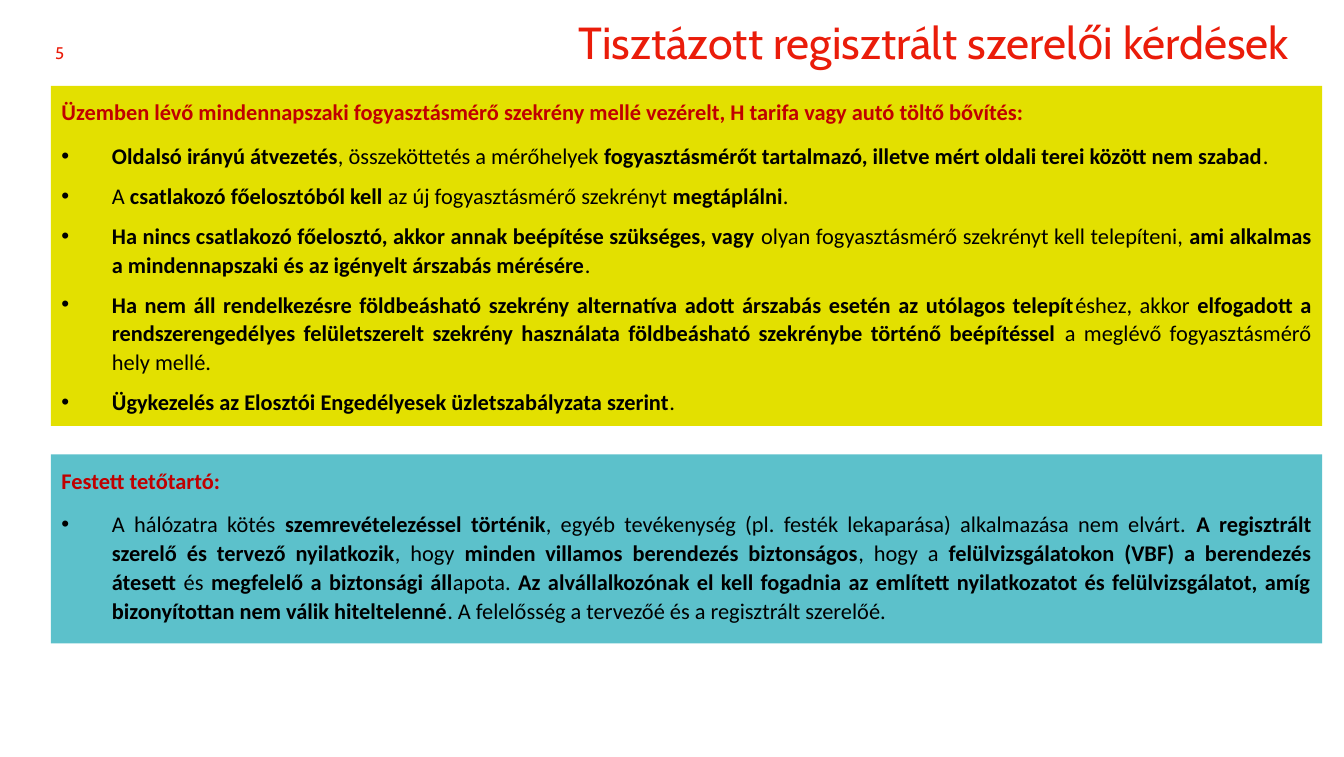
from lxml.etree import SubElement
from pptx import Presentation
from pptx.dml.color import RGBColor
from pptx.enum.shapes import MSO_SHAPE as Shape
from pptx.enum.text import MSO_ANCHOR as Anchor, PP_ALIGN as Align
from pptx.oxml.ns import qn
from pptx.util import Pt

RED = RGBColor(0xEA, 0x1C, 0x0A)
DARK_RED = RGBColor(0xC0, 0x00, 0x00)
BLACK = RGBColor(0x00, 0x00, 0x00)
YELLOW = RGBColor(0xE3, 0xE0, 0x00)
TEAL = RGBColor(0x5C, 0xC1, 0xCB)

PANEL_LEFT, PANEL_WIDTH = 27.3, 681
INSET = 5.67
INDENT = 27

METER_HEADING = (
    "Üzemben lévő mindennapszaki fogyasztásmérő szekrény mellé vezérelt, "
    "H tarifa vagy autó töltő bővítés:"
)
METER_RULES = [
    "**Oldalsó irányú átvezetés**, összeköttetés a mérőhelyek "
    "**fogyasztásmérőt tartalmazó, illetve mért oldali terei között nem szabad**.",
    "A **csatlakozó főelosztóból kell** az új fogyasztásmérő szekrényt **megtáplálni**.",
    "**Ha nincs csatlakozó főelosztó, akkor annak beépítése szükséges, vagy **"
    "olyan fogyasztásmérő szekrényt kell telepíteni, "
    "**ami alkalmas a mindennapszaki és az igényelt árszabás mérésére**.",
    "**Ha nem áll rendelkezésre földbeásható szekrény alternatíva adott árszabás "
    "esetén az utólagos telepít**éshez, akkor **elfogadott a rendszerengedélyes "
    "felületszerelt szekrény használata földbeásható szekrénybe történő beépítéssel **"
    "a meglévő fogyasztásmérő hely mellé.",
    "**Ügykezelés az Elosztói Engedélyesek üzletszabályzata szerint**.",
]
ROOF_HEADING = "Festett tetőtartó:"
ROOF_RULES = [
    "A hálózatra kötés **szemrevételezéssel történik**, egyéb tevékenység "
    "(pl. festék lekaparása) alkalmazása nem elvárt. **A regisztrált szerelő és "
    "tervező nyilatkozik**, hogy **minden villamos berendezés biztonságos**, hogy a "
    "**felülvizsgálatokon (VBF) a berendezés átesett** és **megfelelő a biztonsági "
    "áll**apota. **Az alvállalkozónak el kell fogadnia az említett nyilatkozatot és "
    "felülvizsgálatot, amíg bizonyítottan nem válik hiteltelenné**. "
    "A felelősség a tervezőé és a regisztrált szerelőé.",
]


def set_frame(frame, inset):
    frame.word_wrap = True
    frame.vertical_anchor = Anchor.TOP
    frame.margin_left = frame.margin_right = Pt(inset)
    frame.margin_top = frame.margin_bottom = Pt(inset)


def set_font(paragraph, name, size, color):
    paragraph.font.name = name
    paragraph.font.size = Pt(size)
    paragraph.font.color.rgb = color


def add_label(slide, left, top, width, height, text, size, leading, align):
    label = slide.shapes.add_textbox(Pt(left), Pt(top), Pt(width), Pt(height))
    set_frame(label.text_frame, 0)
    line = label.text_frame.paragraphs[0]
    line.text = text
    line.alignment = align
    line.line_spacing = Pt(leading)
    set_font(line, "Cabin", size, RED)


def format_body(paragraph, color, space_after):
    paragraph.alignment = Align.JUSTIFY
    paragraph.line_spacing = 1.07
    paragraph.space_after = Pt(space_after)
    set_font(paragraph, "Calibri", 12, color)


def add_bullet(frame, marked_text):
    rule = frame.add_paragraph()
    format_body(rule, BLACK, 6)
    properties = rule._p.get_or_add_pPr()
    properties.set("marL", str(Pt(INDENT)))
    properties.set("indent", str(-Pt(INDENT)))
    bullet_font = SubElement(properties, qn("a:buFont"))
    bullet_font.set("typeface", "Arial")
    bullet = SubElement(properties, qn("a:buChar"))
    bullet.set("char", "•")
    properties.append(properties.find(qn("a:defRPr")))
    for position, part in enumerate(marked_text.split("**")):
        if part:
            run = rule.add_run()
            run.text = part
            run.font.bold = position % 2 == 1


def add_panel(slide, top, height, fill, heading_text, rules):
    panel = slide.shapes.add_shape(
        Shape.RECTANGLE, Pt(PANEL_LEFT), Pt(top), Pt(PANEL_WIDTH), Pt(height))
    panel.shadow.inherit = False
    panel.fill.solid()
    panel.fill.fore_color.rgb = fill
    panel.line.fill.background()
    frame = panel.text_frame
    set_frame(frame, INSET)
    heading = frame.paragraphs[0]
    heading.text = heading_text
    format_body(heading, DARK_RED, 8)
    heading.font.bold = True
    for rule in rules:
        add_bullet(frame, rule)


def main():
    deck = Presentation()
    deck.slide_width, deck.slide_height = Pt(720), Pt(405.36)
    slide = deck.slides.add_slide(deck.slide_layouts[6])
    add_label(slide, 48, 12.7, 642.5, 32,
              "Tisztázott regisztrált szerelői kérdések", 24, 24, Align.RIGHT)
    add_label(slide, 29.5, 23, 60, 11.5, "5", 9, 10.8, Align.LEFT)
    add_panel(slide, 243.3, 101.3, TEAL, ROOF_HEADING, ROOF_RULES)
    add_panel(slide, 46, 182, YELLOW, METER_HEADING, METER_RULES)
    deck.save("out.pptx")


if __name__ == "__main__":
    main()
